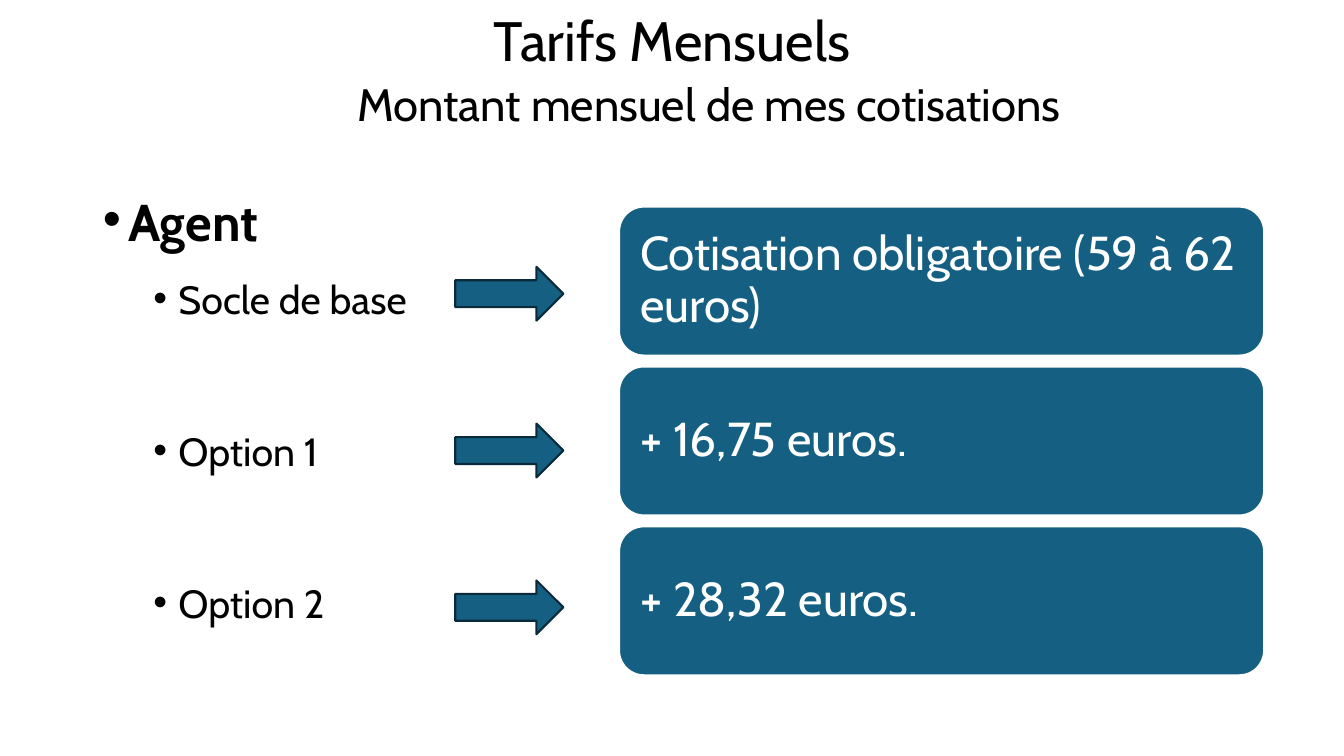
from dataclasses import dataclass

from lxml.etree import SubElement
from pptx import Presentation
from pptx.dml.color import RGBColor
from pptx.enum.shapes import MSO_SHAPE
from pptx.enum.text import MSO_ANCHOR, PP_ALIGN
from pptx.oxml.ns import qn
from pptx.shapes.autoshape import Shape
from pptx.slide import Slide
from pptx.text.text import TextFrame, _Paragraph
from pptx.util import Pt

FONT = "Cabin"
BLACK = RGBColor(0x00, 0x00, 0x00)
WHITE = RGBColor(0xFF, 0xFF, 0xFF)
BLUE = RGBColor(0x15, 0x60, 0x82)
DARK_BLUE = RGBColor(0x09, 0x2A, 0x39)

CARD_TOP, CARD_STEP = 147.6, 114.2
ARROW_TOP, ARROW_STEP = 190.6, 112
BULLET_HANG = 18


@dataclass
class Heading:
    text: str
    left: float
    top: float
    size: float


@dataclass
class Rate:
    label: str
    amount: str
    space_before: float


HEADINGS = [
    Heading("Tarifs Mensuels", 180, 6, 39.6),
    Heading("Montant mensuel de mes cotisations", 206.4, 51, 32.4),
]
RATES = [
    Rate("Socle de base", "Cotisation obligatoire (59 à 62 euros)", 27.5),
    Rate("Option 1", "+ 16,75 euros.", 85),
    Rate("Option 2", "+ 28,32 euros.", 85),
]


def write_text(paragraph: _Paragraph, text: str, *, size: float,
               color: RGBColor = BLACK, bold: bool = False,
               align: PP_ALIGN = PP_ALIGN.LEFT, line_spacing: float = 0.9,
               space_before: float = 0) -> None:
    paragraph.alignment = align
    paragraph.line_spacing = line_spacing
    paragraph.space_before = Pt(space_before)
    run = paragraph.add_run()
    run.text = text
    run.font.name = FONT
    run.font.size = Pt(size)
    run.font.bold = bold
    run.font.color.rgb = color


def add_bullet(paragraph: _Paragraph, indent: float) -> None:
    properties = paragraph._p.get_or_add_pPr()
    properties.set("marL", str(Pt(indent)))
    properties.set("indent", str(-Pt(BULLET_HANG)))
    SubElement(properties, qn("a:buFont")).set("typeface", "Arial")
    SubElement(properties, qn("a:buChar")).set("char", "•")


def add_text_box(slide: Slide, left: float, top: float, width: float,
                 height: float) -> TextFrame:
    text_box = slide.shapes.add_textbox(Pt(left), Pt(top), Pt(width), Pt(height))
    text_box.text_frame.word_wrap = True
    return text_box.text_frame


def add_blue_shape(slide: Slide, kind: MSO_SHAPE, left: float, top: float,
                   width: float, height: float, line_color: RGBColor) -> Shape:
    shape = slide.shapes.add_shape(kind, Pt(left), Pt(top), Pt(width), Pt(height))
    shape.shadow.inherit = False
    shape.fill.solid()
    shape.fill.fore_color.rgb = BLUE
    shape.line.color.rgb = line_color
    shape.line.width = Pt(1.5)
    return shape


def add_card(slide: Slide, top: float, text: str) -> None:
    card = add_blue_shape(slide, MSO_SHAPE.ROUNDED_RECTANGLE,
                          442.2, top, 460.8, 106.4, WHITE)
    frame = card.text_frame
    frame.word_wrap = True
    frame.vertical_anchor = MSO_ANCHOR.MIDDLE
    frame.margin_left = frame.margin_right = Pt(10)
    frame.margin_top = frame.margin_bottom = Pt(10)
    write_text(frame.paragraphs[0], text, size=34, color=WHITE)


def main() -> None:
    presentation = Presentation()
    presentation.slide_width = Pt(960)
    presentation.slide_height = Pt(540)
    slide = presentation.slides.add_slide(presentation.slide_layouts[6])

    # Title and subtitle
    for heading in HEADINGS:
        frame = add_text_box(slide, heading.left, heading.top, 600, 50)
        frame.vertical_anchor = MSO_ANCHOR.MIDDLE
        write_text(frame.paragraphs[0], heading.text, size=heading.size,
                   align=PP_ALIGN.CENTER)

    # Bulleted list of plans
    frame = add_text_box(slide, 66.4, 144, 408, 342.7)
    agent = frame.paragraphs[0]
    write_text(agent, "Agent", size=36.9, bold=True, line_spacing=0.7)
    add_bullet(agent, BULLET_HANG)
    for rate in RATES:
        paragraph = frame.add_paragraph()
        paragraph.level = 1
        write_text(paragraph, rate.label, size=28.1, line_spacing=0.7,
                   space_before=rate.space_before)
        add_bullet(paragraph, 54)

    # Amount cards and the arrows that lead to them
    for row, rate in enumerate(RATES):
        add_card(slide, CARD_TOP + row * CARD_STEP, rate.amount)
        add_blue_shape(slide, MSO_SHAPE.RIGHT_ARROW, 325.2,
                       ARROW_TOP + row * ARROW_STEP, 77.2, 38.4, DARK_BLUE)

    presentation.save("out.pptx")


if __name__ == "__main__":
    main()
